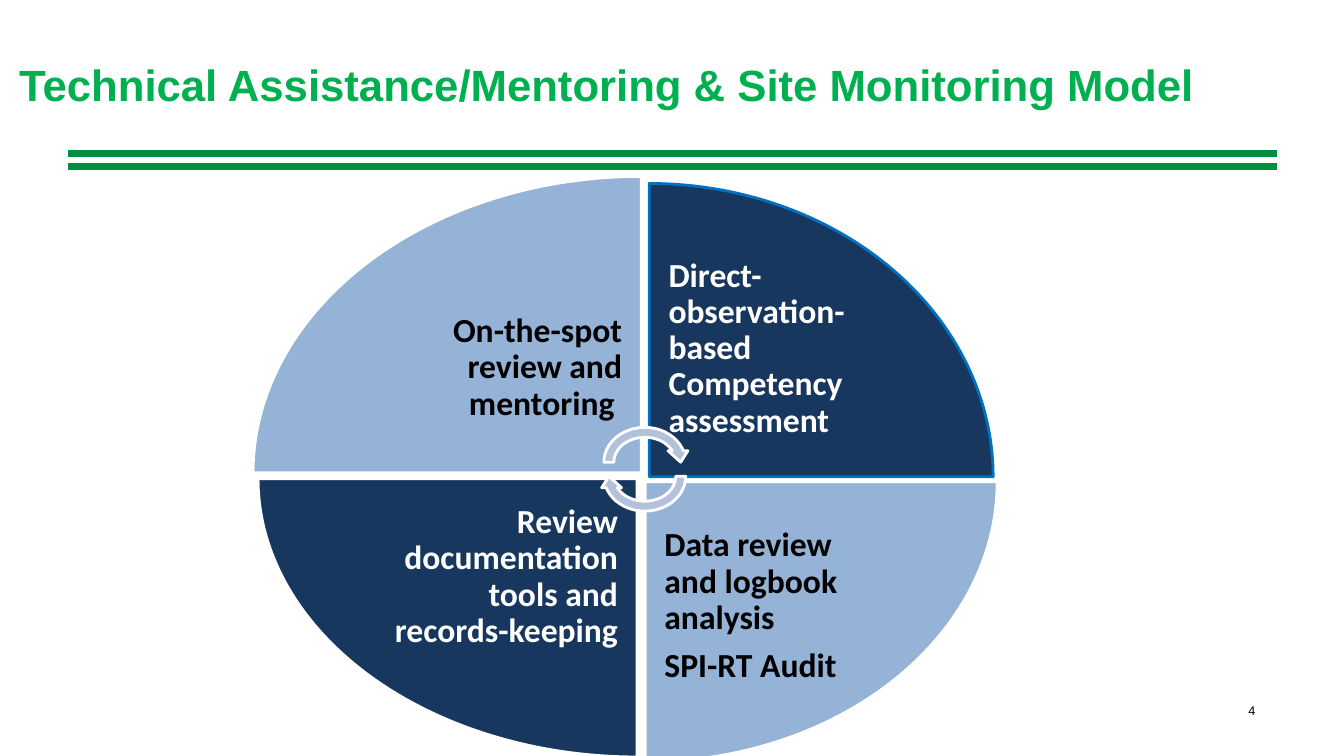
from dataclasses import dataclass

from lxml.etree import SubElement
from pptx import Presentation
from pptx.dml.color import RGBColor
from pptx.enum.shapes import MSO_CONNECTOR, MSO_SHAPE
from pptx.enum.text import MSO_ANCHOR, MSO_AUTO_SIZE
from pptx.enum.text import PP_ALIGN as Align
from pptx.oxml.ns import qn
from pptx.slide import Slide
from pptx.text.text import TextFrame
from pptx.util import Emu, Pt

EMU_PER_PX = 9144
TEXT_INSET = 19


@dataclass(frozen=True)
class Theme:
    title: str = "00B050"
    rule: str = "008E40"
    light: str = "95B3D7"
    dark: str = "17375E"
    accent: str = "0070C0"
    arrow: str = "B3C1DB"
    white: str = "FFFFFF"
    black: str = "000000"
    heading_font: str = "Arial"
    body_font: str = "Calibri"
    title_size: float = 31.2
    body_size: float = 24
    number_size: float = 9
    rule_width: float = 5
    outline_width: float = 2


THEME = Theme()


@dataclass(frozen=True)
class Box:
    left: int
    top: int
    width: int
    height: int

    def emu(self) -> tuple[Emu, Emu, Emu, Emu]:
        return (px(self.left), px(self.top), px(self.width), px(self.height))


@dataclass(frozen=True)
class TextStyle:
    font: str
    size: float
    color: str
    bold: bool = True
    align: Align = Align.LEFT


@dataclass(frozen=True)
class Quadrant:
    wedge: Box
    rotation: int
    fill: str
    outline: str
    label: Box
    color: str
    align: Align
    lines: tuple[str, ...]


QUADRANTS = (
    Quadrant(Box(251, 175, 385, 294), 0, THEME.light, THEME.white,
             Box(364, 261, 272, 208), THEME.black, Align.RIGHT,
             ("On-the-spot review and mentoring ",)),
    Quadrant(Box(669, 157, 291, 341), 90, THEME.dark, THEME.accent,
             Box(644, 243, 241, 206), THEME.white, Align.LEFT,
             ("Direct-observation-based Competency assessment",)),
    Quadrant(Box(640, 478, 349, 278), 180, THEME.light, THEME.white,
             Box(640, 503, 247, 197), THEME.black, Align.LEFT,
             ("Data review and logbook analysis", "SPI-RT Audit")),
    Quadrant(Box(306, 425, 276, 376), 270, THEME.dark, THEME.white,
             Box(366, 475, 266, 195), THEME.white, Align.RIGHT,
             ("Review documentation tools and records-keeping",)),
)
ARROWS = ((Box(594, 419, 91, 79), 0), (Box(594, 433, 91, 79), 180))
RULE_TOPS = (165, 152)


def px(value: int) -> Emu:
    return Emu(value * EMU_PER_PX)


def rgb(color: str) -> RGBColor:
    return RGBColor.from_string(color)


def write(frame: TextFrame, lines: tuple[str, ...], style: TextStyle) -> None:
    frame.word_wrap = True
    frame.auto_size = MSO_AUTO_SIZE.NONE
    for index, line in enumerate(lines):
        paragraph = frame.paragraphs[0] if index == 0 else frame.add_paragraph()
        paragraph.alignment = style.align
        run = paragraph.add_run()
        run.text = line
        run.font.name = style.font
        run.font.size = Pt(style.size)
        run.font.bold = style.bold
        run.font.color.rgb = rgb(style.color)


def add_title(slide: Slide, box: Box, text: str) -> None:
    title = slide.shapes.title
    title.left, title.top, title.width, title.height = box.emu()
    title.text_frame.vertical_anchor = MSO_ANCHOR.MIDDLE
    write(title.text_frame, (text,),
          TextStyle(THEME.heading_font, THEME.title_size, THEME.title))


def add_rule(slide: Slide, top: int) -> None:
    rule = slide.shapes.add_connector(
        MSO_CONNECTOR.STRAIGHT, px(67), px(top), px(1267), px(top))
    rule.line.color.rgb = rgb(THEME.rule)
    rule.line.width = Pt(THEME.rule_width)
    SubElement(rule._element.spPr, qn("a:effectLst"))


def add_figure(slide: Slide, kind: MSO_SHAPE, box: Box, rotation: int,
               fill: str, outline: str) -> None:
    shape = slide.shapes.add_shape(kind, *box.emu())
    shape.rotation = rotation
    shape.shadow.inherit = False
    shape.fill.solid()
    shape.fill.fore_color.rgb = rgb(fill)
    shape.line.color.rgb = rgb(outline)
    shape.line.width = Pt(THEME.outline_width)


def add_label(slide: Slide, quadrant: Quadrant) -> None:
    frame = slide.shapes.add_textbox(*quadrant.label.emu()).text_frame
    frame.vertical_anchor = MSO_ANCHOR.MIDDLE
    frame.margin_left = frame.margin_right = px(TEXT_INSET)
    frame.margin_top = frame.margin_bottom = px(TEXT_INSET)
    write(frame, quadrant.lines,
          TextStyle(THEME.body_font, THEME.body_size, quadrant.color,
                    align=quadrant.align))
    for paragraph in frame.paragraphs:
        paragraph.line_spacing = 0.9
        paragraph.space_after = Pt(THEME.body_size * 0.35)


def add_slide_number(slide: Slide, box: Box, number: str) -> None:
    frame = slide.shapes.add_textbox(*box.emu()).text_frame
    write(frame, (number,),
          TextStyle(THEME.heading_font, THEME.number_size, THEME.black,
                    bold=False, align=Align.RIGHT))


def main() -> None:
    presentation = Presentation()
    presentation.slide_width, presentation.slide_height = px(1333), px(750)
    slide = presentation.slides.add_slide(presentation.slide_layouts[5])
    add_slide_number(slide, Box(944, 692, 311, 52), "4")
    for top in RULE_TOPS:
        add_rule(slide, top)
    add_title(slide, Box(9, 48, 1205, 71),
              "Technical Assistance/Mentoring & Site Monitoring Model")
    for quadrant in QUADRANTS:
        add_figure(slide, MSO_SHAPE.PIE_WEDGE, quadrant.wedge,
                   quadrant.rotation, quadrant.fill, quadrant.outline)
        add_label(slide, quadrant)
    for box, rotation in ARROWS:
        add_figure(slide, MSO_SHAPE.CIRCULAR_ARROW, box, rotation,
                   THEME.arrow, THEME.white)
    presentation.save("out.pptx")


if __name__ == "__main__":
    main()
